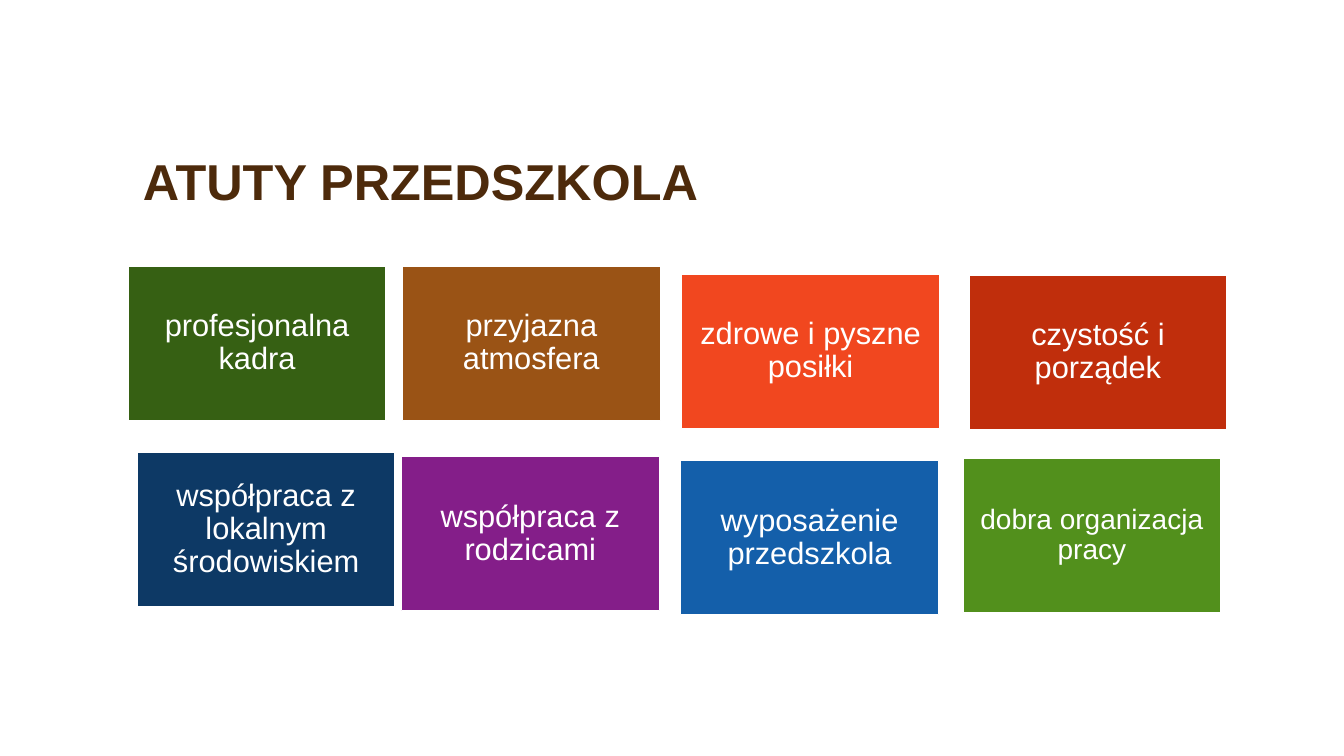
from dataclasses import dataclass

from pptx import Presentation
from pptx.dml.color import RGBColor
from pptx.enum.shapes import MSO_SHAPE
from pptx.enum.text import MSO_ANCHOR as Anchor, PP_ALIGN as Align
from pptx.util import Inches, Pt


@dataclass(frozen=True)
class Theme:
    font: str = "Arial"
    heading: str = "4D2A0B"
    white: str = "FFFFFF"
    navy: str = "0D3965"
    dark_green: str = "366013"
    brown: str = "9A5315"
    orange: str = "F1471F"
    red: str = "C02E0C"
    purple: str = "841E89"
    blue: str = "145FAA"
    green: str = "52901C"
    heading_size: int = 36
    tile_size: int = 22
    small_tile_size: int = 20


theme = Theme()


def write(shape, text, *, size, color, bold=False, align=Align.LEFT,
          anchor=Anchor.MIDDLE, margin=0.09):
    frame = shape.text_frame
    frame.word_wrap = True
    frame.vertical_anchor = anchor
    frame.margin_left = frame.margin_right = Inches(margin)
    frame.margin_top = frame.margin_bottom = Inches(min(margin, 0.09))
    paragraph = frame.paragraphs[0]
    paragraph.alignment = align
    paragraph.line_spacing = 0.9
    run = paragraph.add_run()
    run.text = text
    run.font.name = theme.font
    run.font.size = Pt(size)
    run.font.bold = bold
    run.font.color.rgb = RGBColor.from_string(color)


presentation = Presentation()
presentation.slide_width = Inches(13.33)
presentation.slide_height = Inches(7.5)
slide = presentation.slides.add_slide(presentation.slide_layouts[6])

# Heading
heading = slide.shapes.add_textbox(Inches(1.32), Inches(0.86), Inches(11), Inches(1.33))
write(heading, "ATUTY PRZEDSZKOLA", size=theme.heading_size, color=theme.heading,
      bold=True, anchor=Anchor.BOTTOM, margin=0.1)

# Strengths: hand-placed tiles of one size
strengths = [
    ("profesjonalna kadra", 1.27, 2.64, theme.dark_green, theme.tile_size),
    ("przyjazna atmosfera", 3.99, 2.64, theme.brown, theme.tile_size),
    ("zdrowe i pyszne posiłki", 6.76, 2.72, theme.orange, theme.tile_size),
    ("czystość i porządek", 9.61, 2.73, theme.red, theme.tile_size),
    ("współpraca z lokalnym środowiskiem", 1.36, 4.49, theme.navy, theme.tile_size),
    ("współpraca z rodzicami", 3.98, 4.53, theme.purple, theme.tile_size),
    ("wyposażenie przedszkola", 6.75, 4.57, theme.blue, theme.tile_size),
    ("dobra organizacja pracy", 9.55, 4.55, theme.green, theme.small_tile_size),
]
for strength, left, top, fill, size in strengths:
    tile = slide.shapes.add_shape(MSO_SHAPE.RECTANGLE, Inches(left), Inches(top),
                                  Inches(2.56), Inches(1.53))
    tile.shadow.inherit = False
    tile.fill.solid()
    tile.fill.fore_color.rgb = RGBColor.from_string(fill)
    tile.line.color.rgb = RGBColor.from_string(theme.white)
    tile.line.width = Pt(1)
    write(tile, strength, size=size, color=theme.white, align=Align.CENTER)

presentation.save("out.pptx")
